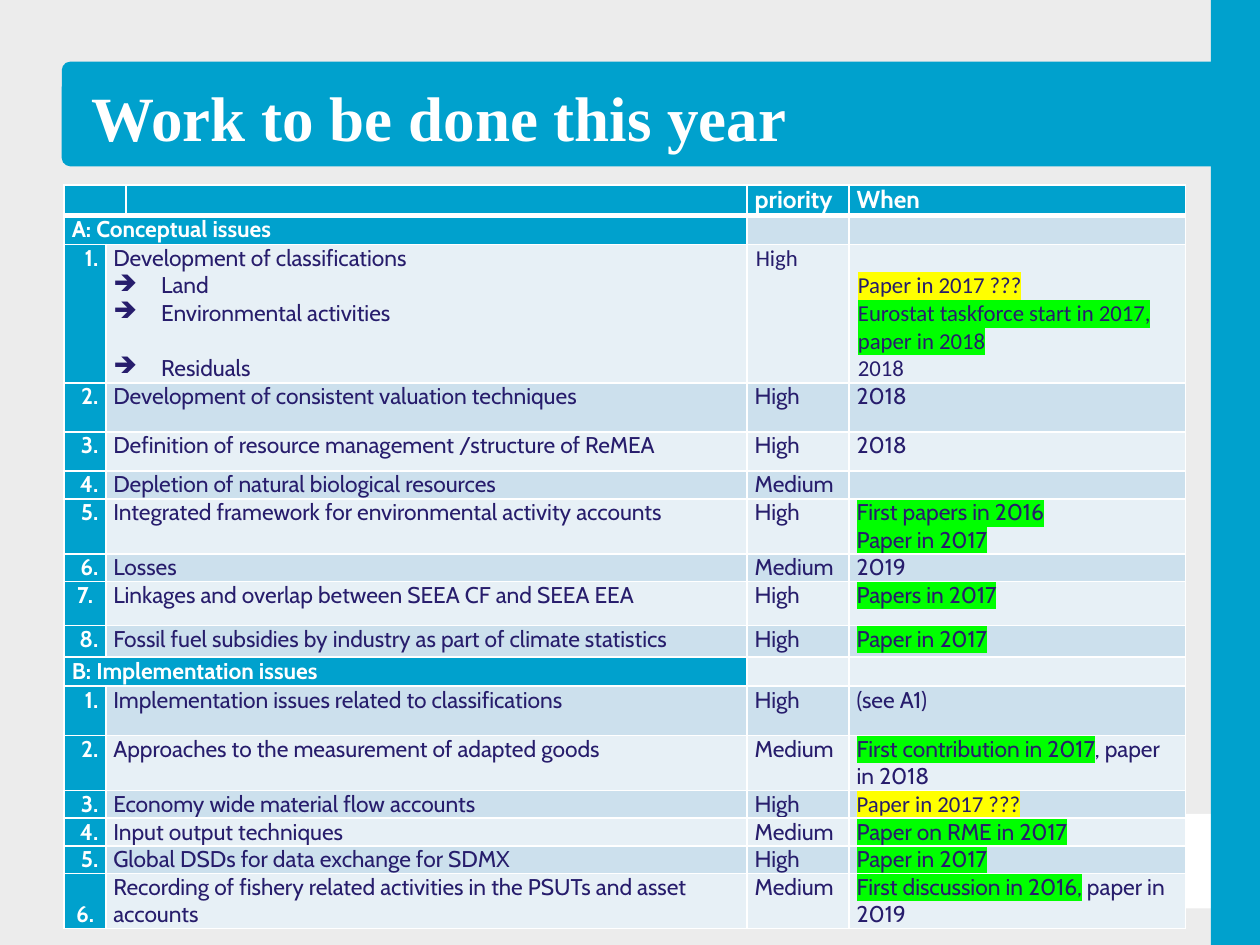
from lxml import etree
from pptx import Presentation
from pptx.dml.color import RGBColor
from pptx.enum.shapes import MSO_SHAPE
from pptx.enum.text import MSO_ANCHOR, PP_ALIGN
from pptx.oxml.ns import qn
from pptx.util import Inches, Pt

RECTANGLE = MSO_SHAPE.RECTANGLE
ROUNDED = MSO_SHAPE.ROUNDED_RECTANGLE
TWO_ROUNDED = MSO_SHAPE.ROUND_2_SAME_RECTANGLE
MIDDLE, TOP, BOTTOM = MSO_ANCHOR.MIDDLE, MSO_ANCHOR.TOP, MSO_ANCHOR.BOTTOM
LEFT, CENTER, RIGHT = PP_ALIGN.LEFT, PP_ALIGN.CENTER, PP_ALIGN.RIGHT

GREY = RGBColor(0xEC, 0xEC, 0xEC)
WHITE = RGBColor(0xFF, 0xFF, 0xFF)
BLUE = RGBColor(0x00, 0xA1, 0xCD)
INDIGO = RGBColor(0x27, 0x1D, 0x6C)
BANDS = [RGBColor(0xE7, 0xF0, 0xF6), RGBColor(0xCC, 0xE0, 0xED)]
GREEN = RGBColor(0x00, 0xFF, 0x00)
YELLOW = RGBColor(0xFF, 0xFF, 0x00)

TABLE_FONT, ALTERNATE_FONT = "Cabin", "Calibri"
BODY_SIZE = 13
LINE_HEIGHT = 15.8  # points taken by one line of body text
COLUMN_WIDTHS = [0.33, 0.16, 4.93, 0.81, 2.67]
ROW_HEIGHTS = [0.24, 0.23, 1.04, 0.39, 0.31, 0.21, 0.41, 0.21, 0.35,
               0.25, 0.23, 0.39, 0.41, 0.21, 0.21, 0.21, 0.41]

# Each topic: number, description, priority, lines of (text, highlight) runs.
# A row with a single entry is a section heading.
TOPICS = [
    ("A: Conceptual issues",),
    ("1.", "Development of classifications\nLand\nEnvironmental activities\nResiduals", "High",
     [[("Paper in 2017 ???", YELLOW)],
      [("Eurostat taskforce start in 2017, paper in 2018", GREEN)],
      [("2018", None)]]),
    ("2.", "Development of consistent valuation techniques", "High", [[("2018", None)]]),
    ("3.", "Definition of resource management /structure of ReMEA", "High", [[("2018", None)]]),
    ("4.", "Depletion of natural biological resources", "Medium", []),
    ("5.", "Integrated framework for environmental activity accounts", "High",
     [[("First papers in 2016", GREEN)], [("Paper in 2017", GREEN)]]),
    ("6.", "Losses", "Medium", [[("2019", None)]]),
    ("7.", "Linkages and overlap between SEEA CF and SEEA EEA", "High",
     [[("Papers in 2017", GREEN)]]),
    ("8.", "Fossil fuel subsidies by industry as part of climate statistics", "High",
     [[("Paper in 2017", GREEN)]]),
    ("B: Implementation issues",),
    ("1.", "Implementation issues related to classifications", "High", [[("(see A1)", None)]]),
    ("2.", "Approaches to the measurement of adapted goods", "Medium",
     [[("First contribution in 2017", GREEN), (", paper in 2018", None)]]),
    ("3.", "Economy wide material flow accounts", "High", [[("Paper in 2017 ???", YELLOW)]]),
    ("4.", "Input output techniques", "Medium", [[("Paper on RME in 2017", GREEN)]]),
    ("5.", "Global DSDs for data exchange for SDMX", "High", [[("Paper in 2017", GREEN)]]),
    ("6.", "Recording of fishery related activities in the PSUTs and asset accounts", "Medium",
     [[("First discussion in 2016,", GREEN), (" paper in 2019", None)]]),
]


def add_panel(slide, kind, color, left, top, width, height):
    panel = slide.shapes.add_shape(kind, Inches(left), Inches(top), Inches(width), Inches(height))
    panel.shadow.inherit = False
    panel.fill.solid()
    panel.fill.fore_color.rgb = color
    panel.line.fill.background()
    return panel


def add_frame(slide):
    """Background, corner tab and side bar."""
    slide.background.fill.solid()
    slide.background.fill.fore_color.rgb = GREY
    tab = add_panel(slide, TWO_ROUNDED, WHITE, 8.86, 6.46, 0.75, 0.75)
    tab.adjustments[0] = 0.14
    tab.rotation = 270
    add_panel(slide, RECTANGLE, BLUE, 9.61, 0, 0.39, 7.5)


def add_title(slide, left, top, width, height):
    banner = add_panel(slide, ROUNDED, BLUE, left, top, width, height)
    banner.adjustments[0] = 0.08
    title = slide.shapes.title
    banner._element.addnext(title._element)
    title.left, title.top = Inches(left + 0.14), Inches(top)
    title.width, title.height = Inches(width - 0.31), Inches(height)
    frame = title.text_frame
    frame.text = "Work to be done this year"
    frame.margin_left = frame.margin_right = Inches(0.1)
    frame.margin_top, frame.margin_bottom = Inches(0.08), Inches(0.05)
    frame.vertical_anchor = MIDDLE
    paragraph = frame.paragraphs[0]
    paragraph.alignment = LEFT
    font = paragraph.runs[0].font
    font.name, font.size, font.bold = "Times New Roman", Pt(36), True
    font.color.rgb = WHITE


def style_cell(cell, color, top_border=1, bottom_border=1):
    """Give the cell white borders, a fill and tight margins."""
    properties = cell._tc.get_or_add_tcPr()
    for side, width in (("L", 1), ("R", 1), ("T", top_border), ("B", bottom_border)):
        line = etree.SubElement(properties, qn(f"a:ln{side}"), w=str(Pt(width)))
        fill = etree.SubElement(line, qn("a:solidFill"))
        etree.SubElement(fill, qn("a:srgbClr"), val=str(WHITE))
    cell.fill.solid()
    cell.fill.fore_color.rgb = color
    cell.margin_left = cell.margin_right = Inches(0.06)
    cell.margin_top = cell.margin_bottom = 0
    cell.text_frame.paragraphs[0]._p.get_or_add_endParaRPr().set("sz", str(BODY_SIZE * 100))


def write_cell(cell, lines, color=INDIGO, bold=False, size=BODY_SIZE,
               font_name=TABLE_FONT, alignment=LEFT):
    """Write lines of (text, highlight) runs."""
    frame = cell.text_frame
    for index, line in enumerate(lines):
        paragraph = frame.add_paragraph() if index else frame.paragraphs[0]
        paragraph.alignment = alignment
        for text, highlight in line:
            run = paragraph.add_run()
            run.text = text
            font = run.font
            font.size, font.bold = Pt(size), bold
            font.color.rgb = color
            if highlight is not None:
                mark = etree.SubElement(font._element, qn("a:highlight"))
                etree.SubElement(mark, qn("a:srgbClr"), val=str(highlight))
            font.name = font_name


def add_arrow_bullet(paragraph):
    properties = paragraph._p.get_or_add_pPr()
    properties.set("marL", str(Inches(0.38)))
    properties.set("indent", str(-Inches(0.38)))
    etree.SubElement(properties, qn("a:buChar"), char="➔")


def fill_topic(cells, topic):
    number, description, priority, timing = topic
    lines = [[(text, None)] for text in description.split("\n")]
    has_list = len(lines) > 1
    font_name = ALTERNATE_FONT if has_list or timing == [[("Paper in 2017 ???", YELLOW)]] else TABLE_FONT
    write_cell(cells[0], [[(number, None)]], WHITE, True,
               alignment=CENTER if number == "7." else RIGHT)
    write_cell(cells[1], lines)
    write_cell(cells[3], [[(priority, None)]], font_name=ALTERNATE_FONT if has_list else TABLE_FONT)
    write_cell(cells[4], timing, font_name=font_name)
    if has_list:
        bullets = cells[1].text_frame.paragraphs[1:]
        bullets[-1].space_before = Pt(LINE_HEIGHT)
        for paragraph in bullets:
            add_arrow_bullet(paragraph)
        for cell in cells[3:]:
            cell.margin_left = cell.margin_right = Inches(0.07)
        cells[4].margin_top = Pt(LINE_HEIGHT)


def add_work_table(slide, left, top, width, height):
    table = slide.shapes.add_table(len(ROW_HEIGHTS), len(COLUMN_WIDTHS), Inches(left),
                                   Inches(top), Inches(width), Inches(height)).table
    table.first_row = table.horz_banding = False
    for column, column_width in zip(table.columns, COLUMN_WIDTHS):
        column.width = Inches(column_width)
    for row, row_height in zip(table.rows, ROW_HEIGHTS):
        row.height = Inches(row_height)

    header = list(table.rows[0].cells)
    for cell in header:
        style_cell(cell, BLUE, bottom_border=3)
    header[0].merge(header[1])
    for cell, text in zip(header[3:], ("priority", "When")):
        write_cell(cell, [[(text, None)]], WHITE, True, 14)

    for index, topic in enumerate(TOPICS, start=1):
        cells = list(table.rows[index].cells)
        is_section = len(topic) == 1
        for column, cell in enumerate(cells):
            is_blue = column == 0 or (is_section and column < 3)
            style_cell(cell, BLUE if is_blue else BANDS[index % 2],
                       top_border=3 if index == 1 else 1)
        if is_section:
            cells[0].merge(cells[2])
            write_cell(cells[0], [[(topic[0], None)]], WHITE, True)
        else:
            cells[1].merge(cells[2])
            fill_topic(cells, topic)

    last_number = table.cell(len(TOPICS), 0)
    last_number.vertical_anchor = BOTTOM
    last_number.text_frame.paragraphs[0].alignment = CENTER


def main():
    presentation = Presentation()
    presentation.slide_width, presentation.slide_height = Inches(10), Inches(7.5)
    slide = presentation.slides.add_slide(presentation.slide_layouts[5])
    add_frame(slide)
    add_title(slide, 0.49, 0.49, 9.39, 0.83)
    add_work_table(slide, 0.51, 1.47, 8.9, 5.85)
    presentation.save("out.pptx")


if __name__ == "__main__":
    main()
